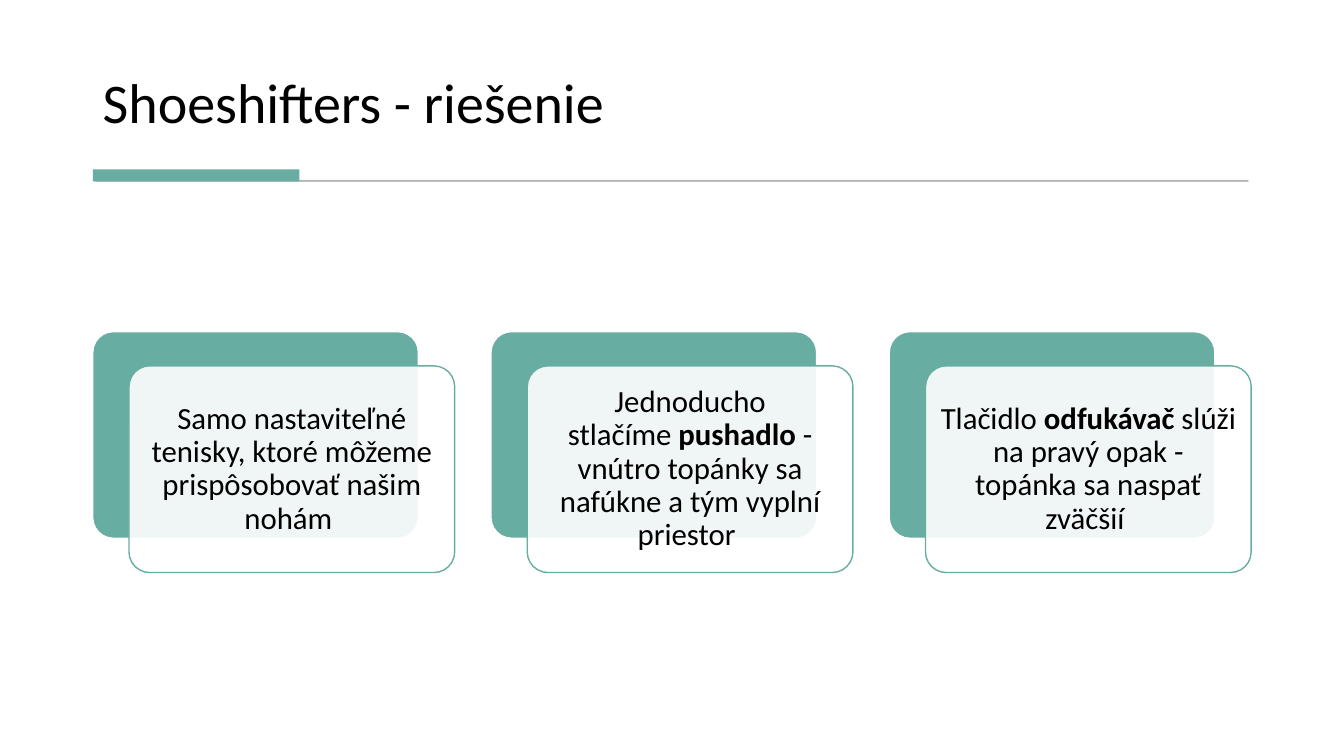
from dataclasses import dataclass

from lxml import etree
from pptx import Presentation, util as u
from pptx.dml.color import RGBColor
from pptx.enum import shapes, text
from pptx.oxml import ns

NBSP = chr(160)
TITLE = "Shoeshifters - riešenie"
CARDS = [
    [(f"Samo nastaviteľné tenisky, ktoré môžeme prispôsobovať našim nohám{NBSP}", False)],
    [
        (f"Jednoducho stlačíme{NBSP}", False),
        (f"pushadlo{NBSP}", True),
        (f"- vnútro topánky sa nafúkne a tým vyplní priestor{NBSP}", False),
    ],
    [
        ("Tlačidlo ", False),
        ("odfukávač ", True),
        (f"slúži na pravý opak - topánka sa naspať zväčšií{NBSP}", False),
    ],
]


@dataclass(frozen=True)
class Theme:
    font: str = "Calibri"
    title_size: int = 40
    body_size: int = 22
    ink: str = "000000"
    paper: str = "FFFFFF"
    accent: str = "68ADA2"
    rule: str = "595959"
    rule_alpha: int = 30
    card_alpha: int = 90


THEME = Theme()
SCALE = 9144
SLIDE = (1333, 750)
LEFT, CARD_TOP = 92, 329
CARD_W, CARD_H = 323, 205
CARD_STEP = 395
FRONT_DX, FRONT_DY = 36, 34
CARD_INSET = 9


def px(n):
    return u.Emu(n * SCALE)


def paint(fill, color, alpha=100):
    fill.solid()
    fill.fore_color.rgb = RGBColor.from_string(color)
    if alpha < 100:
        clr = fill._xPr.find(".//" + ns.qn("a:srgbClr"))
        etree.SubElement(clr, ns.qn("a:alpha"), val=str(alpha * 1000))


def add_box(s, kind, box, fill, alpha=100, line=None, width=1, line_alpha=100):
    sp = s.shapes.add_shape(kind, *map(px, box))
    sp.shadow.inherit = False
    paint(sp.fill, fill, alpha)
    if line:
        sp.line.width = u.Pt(width)
        paint(sp.line.fill, line, line_alpha)
    else:
        sp.line.fill.background()
    return sp


def add_card_layer(s, box, **style):
    sp = add_box(s, shapes.MSO_SHAPE.ROUNDED_RECTANGLE, box, **style)
    sp.adjustments[0] = 0.1
    return sp


def write(tf, runs, size, align, anchor):
    tf.word_wrap = True
    tf.vertical_anchor = anchor
    p = tf.paragraphs[0]
    p.alignment = align
    p.line_spacing = 0.9
    for words, bold in runs:
        r = p.add_run()
        r.text = words
        r.font.name = THEME.font
        r.font.size = u.Pt(size)
        r.font.bold = bold
        r.font.color.rgb = RGBColor.from_string(THEME.ink)


def add_header(s):
    title = s.shapes.add_textbox(*map(px, (LEFT, 28, 1149, 111)))
    write(title.text_frame, [(TITLE, False)], THEME.title_size,
          text.PP_ALIGN.LEFT, text.MSO_ANCHOR.BOTTOM)
    rect = shapes.MSO_SHAPE.RECTANGLE
    add_box(s, rect, (95, 179, 1143, 1), THEME.rule, THEME.rule_alpha,
            THEME.rule, 0.75, THEME.rule_alpha)
    add_box(s, rect, (LEFT, 168, 205, 12), THEME.accent)


def add_card(s, index, runs):
    x = LEFT + index * CARD_STEP
    add_card_layer(s, (x, CARD_TOP, CARD_W, CARD_H),
                   fill=THEME.accent, line=THEME.paper)
    front = add_card_layer(s, (x + FRONT_DX, CARD_TOP + FRONT_DY, CARD_W, CARD_H),
                           fill=THEME.paper, alpha=THEME.card_alpha, line=THEME.accent)
    tf = front.text_frame
    tf.margin_left = tf.margin_right = px(CARD_INSET)
    tf.margin_top = tf.margin_bottom = px(CARD_INSET)
    write(tf, runs, THEME.body_size, text.PP_ALIGN.CENTER, text.MSO_ANCHOR.MIDDLE)


def main():
    prs = Presentation()
    prs.slide_width, prs.slide_height = map(px, SLIDE)
    s = prs.slides.add_slide(prs.slide_layouts[6])
    paint(s.background.fill, THEME.paper)
    add_header(s)
    for index, runs in enumerate(CARDS):
        add_card(s, index, runs)
    prs.save("out.pptx")


if __name__ == "__main__":
    main()
